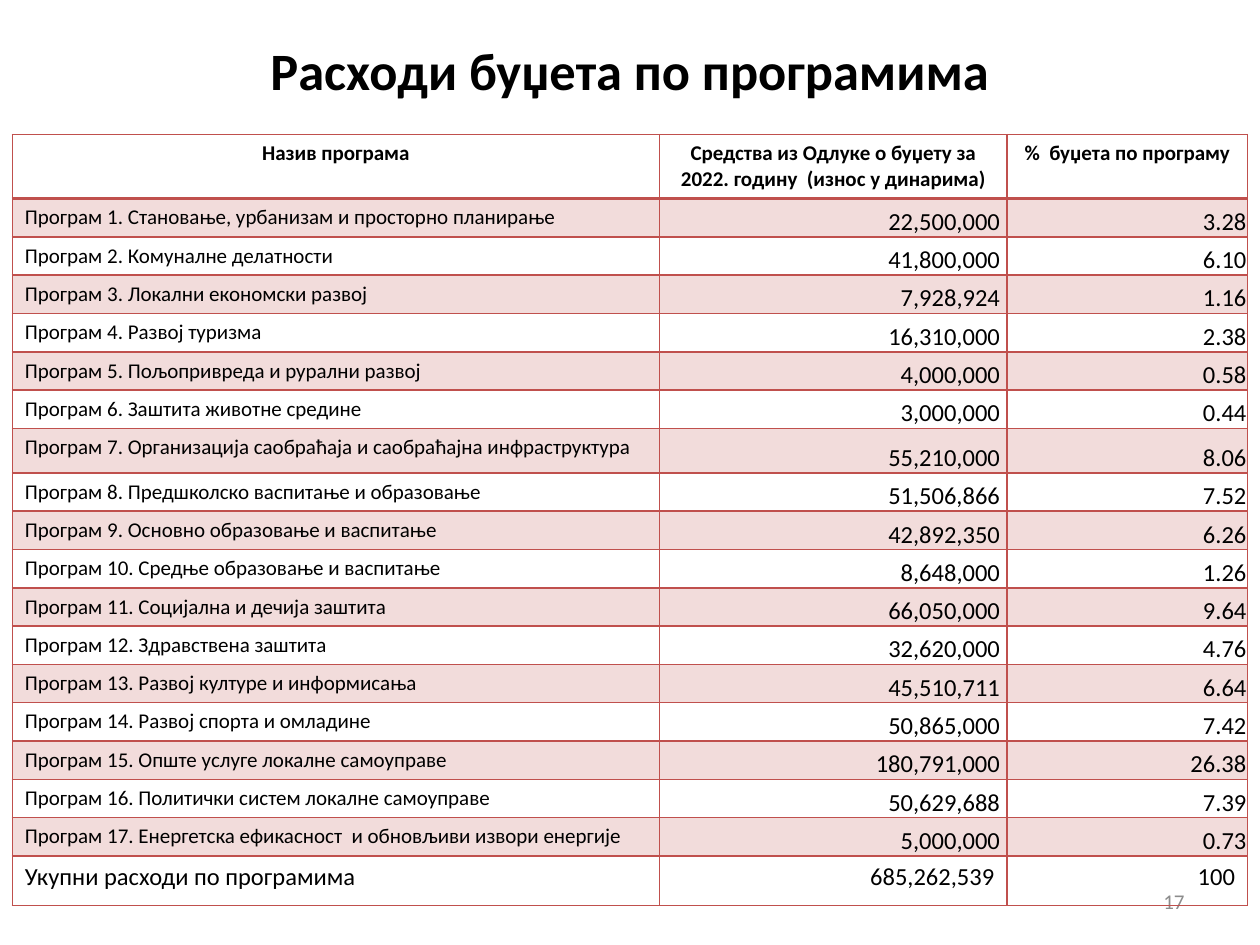
import pptx
import pptx.util
import pptx.dml.color
import pptx.enum.text
from pptx.oxml.ns import qn
from lxml import etree

Pt = pptx.util.Pt
Align = pptx.enum.text.PP_ALIGN
Anchor = pptx.enum.text.MSO_ANCHOR

# Content
TITLE = "Расходи буџета по програмима"
PAGE_NUMBER = "17"
HEADERS = [
    "Назив програма",
    "Средства из Одлуке о буџету за 2022. годину  (износ у динарима)",
    "%  буџета по програму",
]
PROGRAMS = [
    ("Становање, урбанизам и просторно планирање", "22,500,000", "3.28"),
    ("Комуналне делатности", "41,800,000", "6.10"),
    ("Локални економски развој", "7,928,924", "1.16"),
    ("Развој туризма", "16,310,000", "2.38"),
    ("Пољопривреда и рурални развој", "4,000,000", "0.58"),
    ("Заштита животне средине", "3,000,000", "0.44"),
    ("Организација саобраћаја и саобраћајна инфраструктура", "55,210,000", "8.06"),
    ("Предшколско васпитање и образовање", "51,506,866", "7.52"),
    ("Основно образовање и васпитање", "42,892,350", "6.26"),
    ("Средње образовање и васпитање", "8,648,000", "1.26"),
    ("Социјална и дечија заштита", "66,050,000", "9.64"),
    ("Здравствена заштита", "32,620,000", "4.76"),
    ("Развој културе и информисања", "45,510,711", "6.64"),
    ("Развој спорта и омладине", "50,865,000", "7.42"),
    ("Опште услуге локалне самоуправе", "180,791,000", "26.38"),
    ("Политички систем локалне самоуправе", "50,629,688", "7.39"),
    ("Енергетска ефикасност  и обновљиви извори енергије", "5,000,000", "0.73"),
]
TOTAL = ("Укупни расходи по програмима", "685,262,539", "100")

# Format
FONT = "Calibri"
RED, BAND, BLACK, GREY = "C0504D", "F2DCDB", "000000", "8C8C8C"
COLUMN_WIDTHS = [370, 198.5, 137.5]
HEADER_HEIGHT, ROW_HEIGHT, TOTAL_HEIGHT = 36.5, 21.9, 28.4
TALL_ROWS = {7: 25.5}
NUMBER_RIGHT_MARGINS = {1: 4, 2: 0.72}


def color(code):
    return pptx.dml.color.RGBColor.from_string(code)


def write(frame, text, size=12, bold=False, fill=BLACK, align=Align.LEFT):
    para = frame.paragraphs[0]
    para.alignment = align
    span = para.add_run()
    span.text = text
    span.font.name = FONT
    span.font.size = Pt(size)
    span.font.bold = bold
    span.font.color.rgb = color(fill)


def set_borders(cell, **widths):
    properties = cell._tc.get_or_add_tcPr()
    # Lines come before the fill in a cell's properties
    for position, side in enumerate("LRTB"):
        line = etree.Element(qn(f"a:ln{side}"), w=str(Pt(widths.get(side, 1))))
        fill = etree.SubElement(line, qn("a:solidFill"))
        etree.SubElement(fill, qn("a:srgbClr"), val=RED)
        properties.insert(position, line)


def fill_cell(cell, band):
    if band:
        cell.fill.solid()
        cell.fill.fore_color.rgb = color(BAND)
    else:
        cell.fill.background()


deck = pptx.Presentation()
deck.slide_width, deck.slide_height = Pt(720), Pt(540)
page = deck.slides.add_slide(deck.slide_layouts[5])

# Title
title = page.shapes.title
title.left, title.top, title.width, title.height = Pt(53.3), Pt(9.4), Pt(613.4), Pt(61.2)
title.text_frame.vertical_anchor = Anchor.MIDDLE
write(title.text_frame, TITLE, size=30, bold=True, align=Align.CENTER)

# Page number
box = page.shapes.add_textbox(Pt(516), Pt(500.5), Pt(168), Pt(28.8))
box.text_frame.word_wrap = True
box.text_frame.vertical_anchor = Anchor.MIDDLE
write(box.text_frame, PAGE_NUMBER, fill=GREY, align=Align.RIGHT)

# Table grid
names = [(f"Програм {number}. {name}", amount, share)
         for number, (name, amount, share) in enumerate(PROGRAMS, 1)]
rows = [HEADERS, *names, TOTAL]
last = len(rows) - 1
heights = [HEADER_HEIGHT]
heights += [TALL_ROWS.get(number, ROW_HEIGHT) for number in range(1, last)]
heights.append(TOTAL_HEIGHT)
holder = page.shapes.add_table(len(rows), len(HEADERS), Pt(7), Pt(77),
                               Pt(sum(COLUMN_WIDTHS)), Pt(sum(heights)))
table = holder.table
table.first_row = table.horz_banding = False
for column, width in zip(table.columns, COLUMN_WIDTHS):
    column.width = Pt(width)
for row, height in zip(table.rows, heights):
    row.height = Pt(height)

# Table cells
for r, values in enumerate(rows):
    for c, text in enumerate(values):
        cell = table.cell(r, c)
        fill_cell(cell, band=r % 2 == 1 and r < last)
        set_borders(cell, T=2 if r == 1 else 1, B=2 if r == 0 else 1)
        if r == 0:
            write(cell.text_frame, text, bold=True, align=Align.CENTER)
        elif c == 0:
            write(cell.text_frame, text, size=14 if r == last else 12)
        else:
            write(cell.text_frame, text, size=14, align=Align.RIGHT)
            if r < last:
                cell.vertical_anchor = Anchor.BOTTOM
                cell.margin_left = cell.margin_top = Pt(0.72)
                cell.margin_right = Pt(NUMBER_RIGHT_MARGINS[c])
                cell.margin_bottom = Pt(0)

deck.save("out.pptx")
